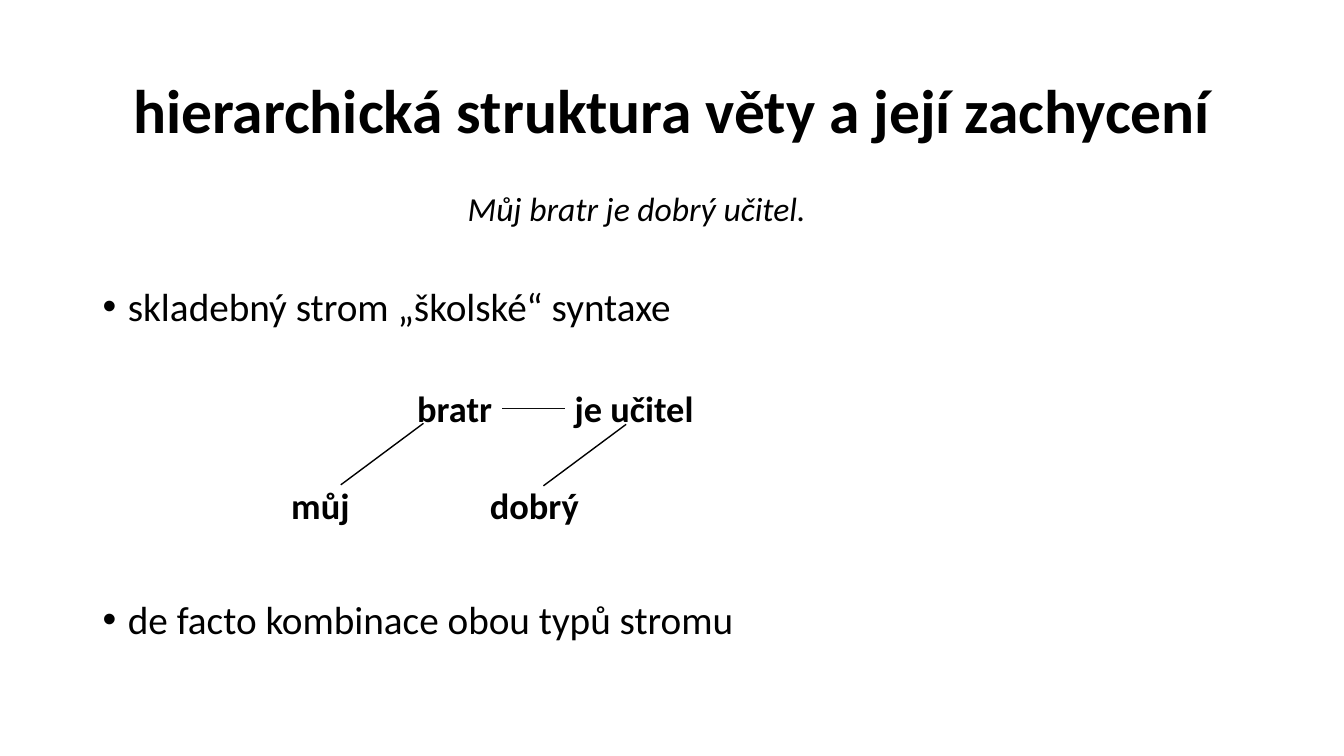
from pptx import Presentation
from pptx.dml.color import RGBColor
from pptx.enum.shapes import MSO_CONNECTOR
from pptx.enum.text import MSO_ANCHOR, MSO_AUTO_SIZE, PP_ALIGN
from pptx.oxml.ns import qn
from pptx.util import Inches, Pt
from lxml import etree

BLACK = RGBColor(0x00, 0x00, 0x00)
DARK = RGBColor(0x0D, 0x0D, 0x0D)
LEFT, CENTER = PP_ALIGN.LEFT, PP_ALIGN.CENTER
TOP, MIDDLE = MSO_ANCHOR.TOP, MSO_ANCHOR.MIDDLE
GROW, FIXED = MSO_AUTO_SIZE.SHAPE_TO_FIT_TEXT, MSO_AUTO_SIZE.NONE
STRAIGHT = MSO_CONNECTOR.STRAIGHT
TITLE_ONLY = 5


class Page:
    font = "Calibri"

    def __init__(self, deck):
        self.slide = deck.slides.add_slide(deck.slide_layouts[TITLE_ONLY])

    def fill_text(self, shape, text, size, bold=False, italic=False,
                  align=LEFT, anchor=TOP, fit=FIXED):
        frame = shape.text_frame
        frame.word_wrap = True
        frame.auto_size = fit
        frame.vertical_anchor = anchor
        para = frame.paragraphs[0]
        para.alignment = align
        run = para.add_run()
        run.text = text
        font = run.font
        font.name, font.size = self.font, Pt(size)
        font.bold, font.italic = bold, italic
        font.color.rgb = BLACK
        return para

    def title(self, text, x, y, w, h):
        shape = self.slide.shapes.title
        shape.left, shape.top = Inches(x), Inches(y)
        shape.width, shape.height = Inches(w), Inches(h)
        para = self.fill_text(shape, text, 44, bold=True, align=CENTER,
                              anchor=MIDDLE)
        para.line_spacing = 0.9

    def box(self, x, y, w, h):
        return self.slide.shapes.add_textbox(
            Inches(x), Inches(y), Inches(w), Inches(h))

    def label(self, text, x, y, w, h, size, **style):
        shape = self.box(x, y, w, h)
        self.fill_text(shape, text, size, fit=GROW, **style)
        return shape

    def bullet(self, text, x, y, w, h):
        para = self.fill_text(self.box(x, y, w, h), text, 28)
        para.line_spacing = 0.9
        para.space_before = Pt(10)
        props = para._p.get_or_add_pPr()
        props.set("marL", str(Inches(0.25)))
        props.set("indent", str(Inches(-0.25)))
        etree.SubElement(props, qn("a:buFont")).set("typeface", "Arial")
        etree.SubElement(props, qn("a:buChar")).set("char", "•")

    def line(self, x1, y1, x2, y2, color=BLACK):
        link = self.slide.shapes.add_connector(
            STRAIGHT, Inches(x1), Inches(y1), Inches(x2), Inches(y2))
        link.line.color.rgb = color
        link.line.width = Pt(1)
        etree.SubElement(link._element.spPr, qn("a:effectLst"))
        return link


def main():
    deck = Presentation()
    deck.slide_width, deck.slide_height = Inches(13.33), Inches(7.5)
    page = Page(deck)

    # Title, first point and example sentence
    page.title("hierarchická struktura věty a její zachycení", 0.92, 0.4, 11.5, 1.45)
    page.bullet("skladebný strom „školské“ syntaxe", 0.92, 2.8, 5.98, 0.65)
    page.label("Můj bratr je dobrý učitel.", 0.92, 1.82, 10.79, 0.5, 24,
               italic=True, align=CENTER)

    # Words of the tree
    words = {}
    for word, x, y, w in (("bratr", 4.04, 3.78, 1.56), ("můj", 2.79, 4.74, 2.19),
                          ("je učitel", 5.6, 3.78, 2.7), ("dobrý", 4.76, 4.74, 2.19)):
        words[word] = page.label(word, x, y, w, 0.54, 26, bold=True)

    # Branches of the tree
    for x, y in ((3.38, 4.81), (5.39, 4.82)):
        page.line(x, y, x + 0.82, y - 0.61)
    bond = page.line(5.6, 4.05, 4.98, 4.05, DARK)
    bond.begin_connect(words["je učitel"], 1)

    # Closing point
    page.bullet("de facto kombinace obou typů stromu", 0.92, 5.91, 6.61, 0.97)

    deck.save("out.pptx")


if __name__ == "__main__":
    main()
